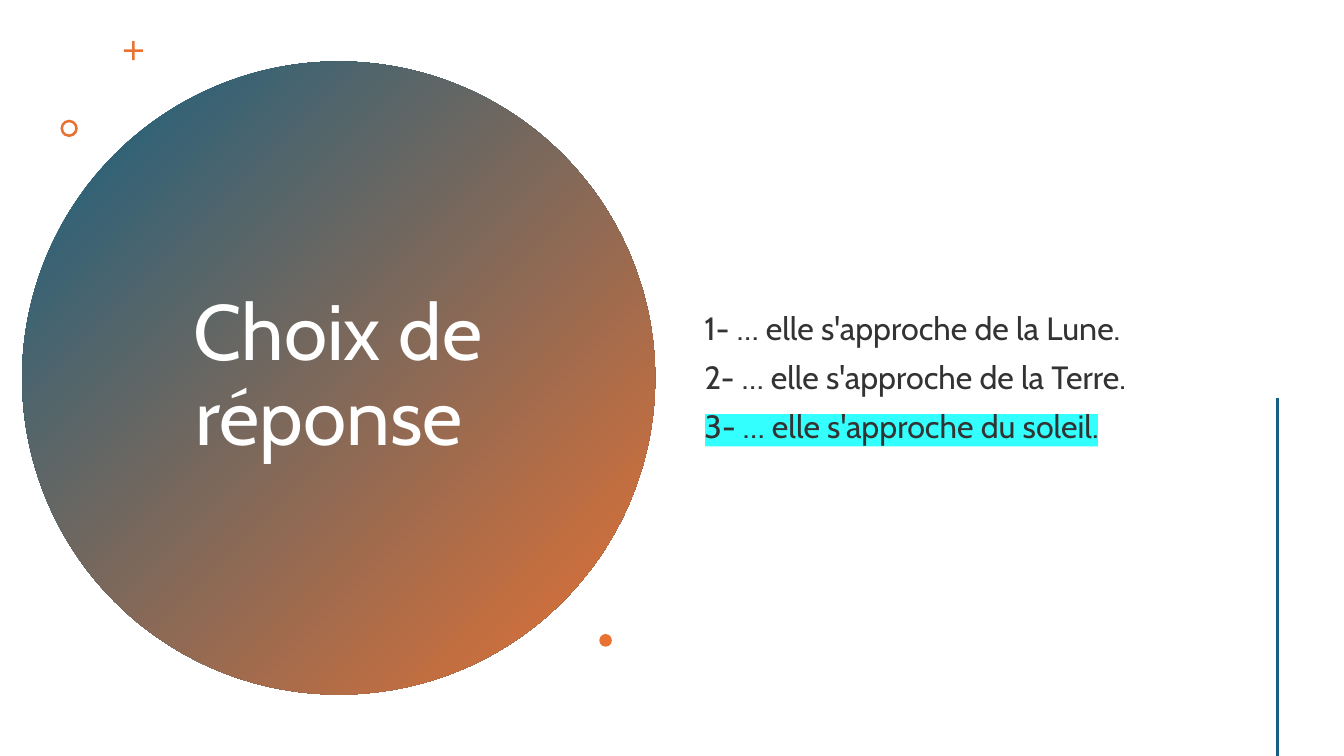
from dataclasses import dataclass

from lxml.etree import SubElement
from pptx import Presentation
from pptx.dml.color import RGBColor as Rgb
from pptx.enum.shapes import MSO_CONNECTOR as Link, MSO_SHAPE as Kind
from pptx.enum.text import MSO_ANCHOR as Anchor, MSO_AUTO_SIZE as Fit, PP_ALIGN as Align
from pptx.oxml.ns import qn
from pptx.util import Pt


@dataclass(frozen=True)
class Theme:
    font: str = "Cabin"
    blue: str = "156082"
    orange: str = "E97132"
    white: str = "FFFFFF"
    black: str = "000000"
    cyan: str = "00FFFF"
    head: int = 56
    text: int = 23


THEME = Theme()


def write(para, text, *, size, color, align=Align.LEFT, before=0, alpha=None, mark=None):
    """Fill one paragraph; alpha is opacity in percent, mark a highlight colour."""
    props = para._p.get_or_add_pPr()
    props.set("marL", "0")
    props.set("indent", "0")
    SubElement(props, qn("a:buNone"))
    para.alignment = align
    para.line_spacing = 0.9
    para.space_before = Pt(before)
    run = para.add_run()
    run.text = text
    font = run.font
    font.name, font.size = THEME.font, Pt(size)
    font.color.rgb = Rgb.from_string(color)
    fill = font.fill._xPr.find(qn("a:solidFill"))
    if alpha:
        SubElement(fill[0], qn("a:alpha"), val=str(alpha * 1000))
    if mark:
        light = SubElement(font.fill._xPr, qn("a:highlight"))
        SubElement(light, qn("a:srgbClr"), val=mark)
        fill.addnext(light)


def place(holder, box):
    """Move a placeholder to its box and return its text frame."""
    holder.left, holder.top, holder.width, holder.height = map(Pt, box)
    frame = holder.text_frame
    frame.word_wrap = True
    frame.auto_size = Fit.NONE
    frame.vertical_anchor = Anchor.MIDDLE
    return frame


def shape(slide, kind, x, y, size, color=THEME.orange):
    item = slide.shapes.add_shape(kind, Pt(x), Pt(y), Pt(size), Pt(size))
    item.shadow.inherit = False
    item.fill.solid()
    item.fill.fore_color.rgb = Rgb.from_string(color)
    item.line.fill.background()
    return item


def badge(slide, x, y, size):
    """Gradient disc holding the title, with three small ornaments."""
    disc = shape(slide, Kind.OVAL, x, y, size)
    disc.fill.gradient()
    disc.fill.gradient_angle = 315
    for stop, color in zip(disc.fill.gradient_stops, (THEME.blue, THEME.orange)):
        stop.color.rgb = Rgb.from_string(color)
    slide.shapes.element.insert(2, disc.element)

    frame = place(slide.shapes.title, (x + 82, y + 57.6, 287.3, 336.2))
    write(frame.paragraphs[0], "Choix de réponse ", size=THEME.head,
          color=THEME.white, align=Align.CENTER)

    plus = shape(slide, Kind.CROSS, x + 72.7, y - 14.5, 13.6)
    plus.adjustments[0] = 0.43
    ring = shape(slide, Kind.DONUT, x + 27.4, y + 41.6, 12.4)
    ring.adjustments[0] = 0.15
    shape(slide, Kind.OVAL, x + 412.3, y + 409, 9)


def choices(slide, box):
    frame = place(slide.placeholders[1], box)
    lines = (
        ("1- … elle s'approche de la Lune.", None),
        ("2- … elle s'approche de la Terre. ", None),
        ("3- … elle s'approche du soleil.", THEME.cyan),
    )
    for i, (text, mark) in enumerate(lines):
        para = frame.add_paragraph() if i else frame.paragraphs[0]
        write(para, text, size=THEME.text, color=THEME.black, alpha=80,
              before=10 if i else 0, mark=mark)


def rule(slide, x, top, end):
    line = slide.shapes.add_connector(Link.STRAIGHT, Pt(x), Pt(top), Pt(x), Pt(end))
    line.line.color.rgb = Rgb.from_string(THEME.blue)
    line.line.width = Pt(2)
    SubElement(line.element.spPr, qn("a:effectLst"))


def main():
    deck = Presentation()
    deck.slide_width, deck.slide_height = Pt(960), Pt(540)
    slide = deck.slides.add_slide(deck.slide_layouts[1])
    badge(slide, 15.8, 43.9, 452.2)
    choices(slide, (496, 41, 375.8, 459.4))
    rule(slide, 912.3, 284, 540)
    deck.save("out.pptx")


if __name__ == "__main__":
    main()
